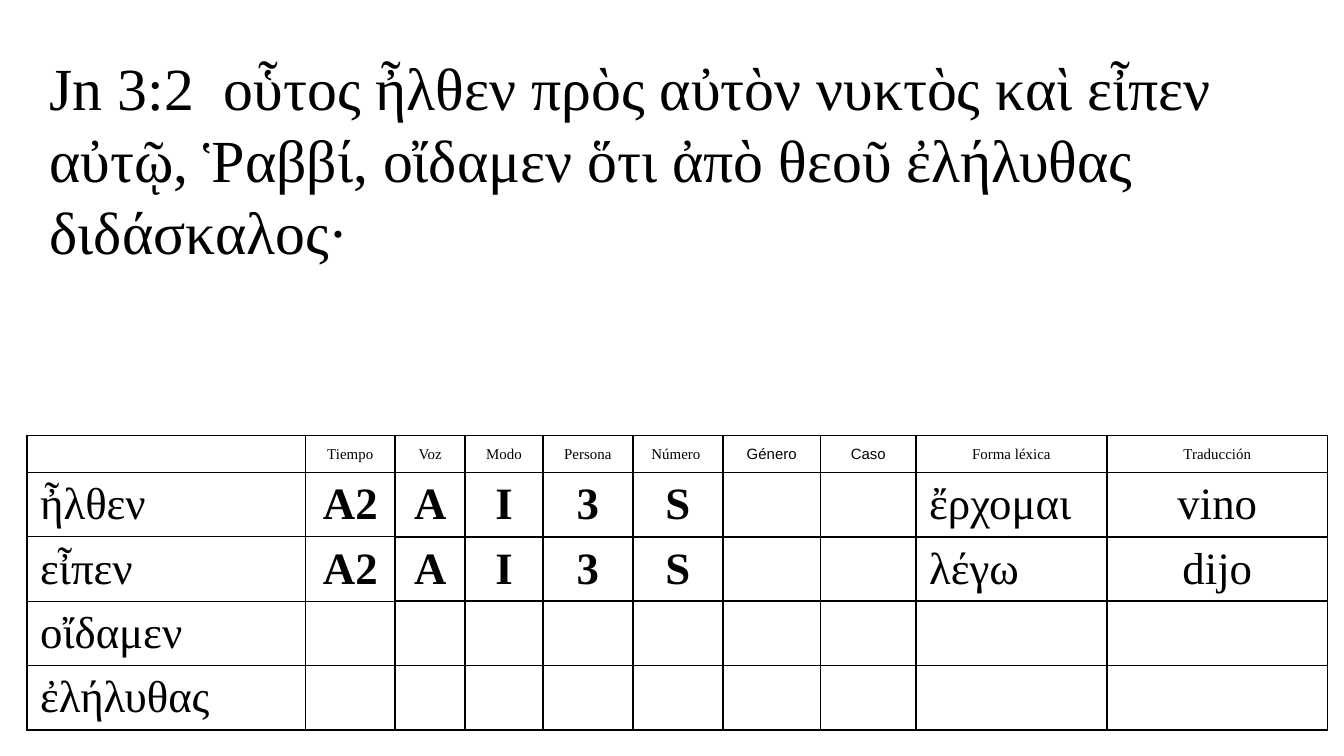
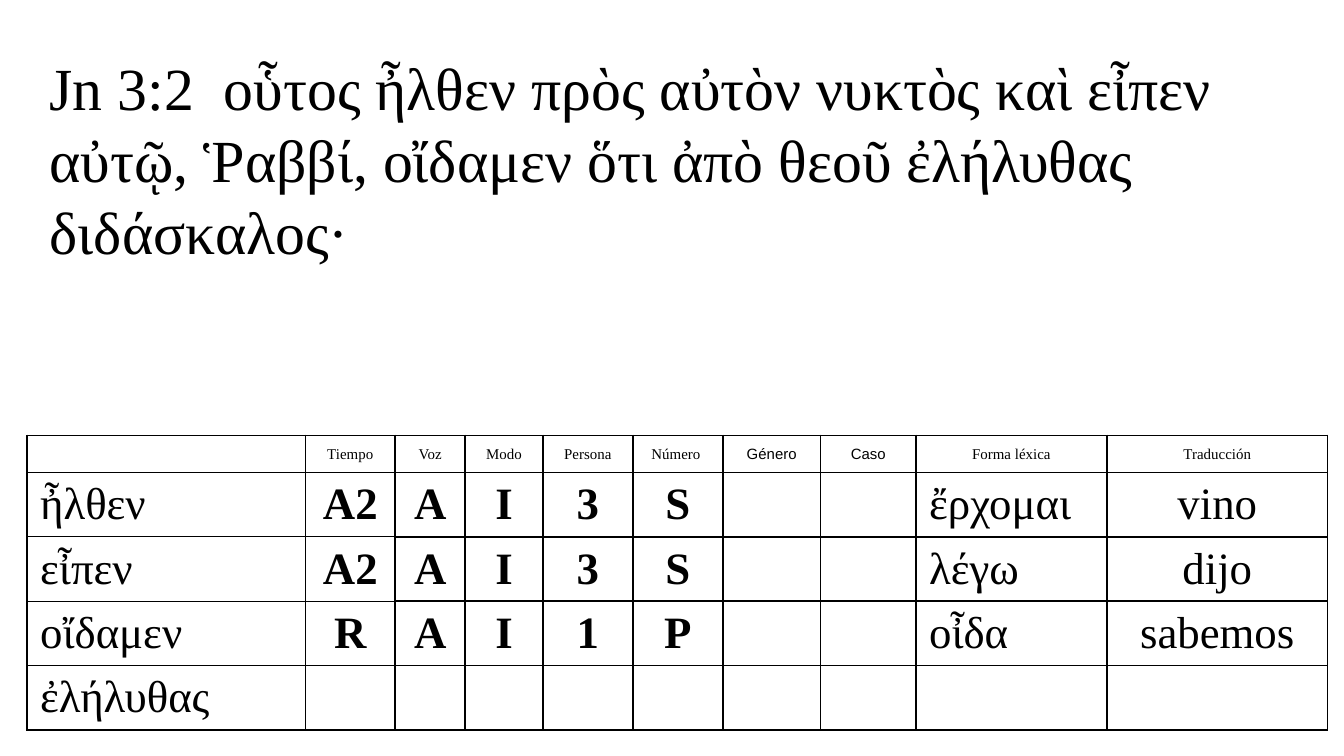
from lxml.etree import SubElement
from pptx import Presentation
from pptx.dml.color import RGBColor
from pptx.enum.text import MSO_ANCHOR, PP_ALIGN
from pptx.oxml.ns import qn
from pptx.util import Cm, Pt

BLACK = RGBColor(0x00, 0x00, 0x00)
SERIF, SANS = "Times New Roman", "Arial"

VERSE = ("Jn 3:2  οὗτος ἦλθεν πρὸς αὐτὸν νυκτὸς καὶ εἶπεν αὐτῷ, Ῥαββί, "
         "οἴδαμεν ὅτι ἀπὸ θεοῦ ἐλήλυθας διδάσκαλος·")
HEADERS = ["", "Tiempo", "Voz", "Modo", "Persona", "Número ", "Género", "Caso",
           "Forma léxica", "Traducción"]
VERBS = ["ἦλθεν", "εἶπεν", "οἴδαμεν", "ἐλήλυθας"]
PARSINGS = [
    ["A2", "A", "I", "3", "S", "", "", "ἔρχομαι", "vino"],
    ["A2", "A", "I", "3", "S", "", "", "λέγω", "dijo"],
    ["R", "A", "I", "1", "P", "", "", "οἶδα", "sabemos"],
]
ANSWERS_SHOWN = [2, 3]  # parsed verbs on each slide

COL_WIDTHS = [5.26, 1.7, 1.32, 1.47, 1.7, 1.7, 1.85, 1.8, 3.61, 4.17]
ROW_HEIGHTS = [0.7] + [1.21] * len(VERBS)
LEXICAL_COL = 8
LEFT_COLS = (0, LEXICAL_COL)
BOLD_COLS = range(1, LEXICAL_COL)
SANS_HEADERS = ("Género", "Caso")


def format_run(r, size, font=SERIF, bold=False):
    r.font.size = Pt(size)
    r.font.name = font
    r.font.bold = bold
    r.font.color.rgb = BLACK


def add_borders(cell, widths):
    """Draw black left, right, top and bottom borders, widths in points."""
    tcPr = cell._tc.get_or_add_tcPr()
    for side, width in zip("LRTB", widths):
        ln = SubElement(tcPr, qn(f"a:ln{side}"), w=str(Pt(width)))
        fill = SubElement(ln, qn("a:solidFill"))
        SubElement(fill, qn("a:srgbClr"), val=str(BLACK))


prs = Presentation()
prs.slide_width, prs.slide_height = Cm(25.4), Cm(14.29)

for shown in ANSWERS_SHOWN:
    s = prs.slides.add_slide(prs.slide_layouts[6])

    tf = s.shapes.add_textbox(Cm(0.69), Cm(0.84), Cm(24), Cm(4.37)).text_frame
    tf.word_wrap = True
    tf.text = VERSE
    format_run(tf.paragraphs[0].runs[0], 32)

    rows = [HEADERS]
    for i, verb in enumerate(VERBS):
        answers = PARSINGS[i] if i < shown else [""] * (len(HEADERS) - 1)
        rows.append([verb] + answers)

    table = s.shapes.add_table(len(rows), len(HEADERS), Cm(0.51), Cm(8.23),
                               Cm(sum(COL_WIDTHS)), Cm(sum(ROW_HEIGHTS))).table
    table.first_row = table.horz_banding = False
    for column, width in zip(table.columns, COL_WIDTHS):
        column.width = Cm(width)
    for row, height in zip(table.rows, ROW_HEIGHTS):
        row.height = Cm(height)

    for i, texts in enumerate(rows):
        for j, text in enumerate(texts):
            cell = table.cell(i, j)
            header = i == 0
            inner = 0.75 if j < 2 else 1
            add_borders(cell, (1, 1, 1 if header else inner, inner))
            cell.fill.background()
            cell.vertical_anchor = MSO_ANCHOR.MIDDLE
            cell.margin_left = cell.margin_right = Cm(0.25)
            cell.margin_top = cell.margin_bottom = Cm(0.1)
            p = cell.text_frame.paragraphs[0]
            left = j in LEFT_COLS and not header
            p.alignment = PP_ALIGN.LEFT if left else PP_ALIGN.CENTER
            if text:
                p.text = text
                format_run(p.runs[0], 8 if header else 24,
                           SANS if text in SANS_HEADERS else SERIF,
                           j in BOLD_COLS and not header)
            else:
                # Keeps an empty cell from stretching its row
                SubElement(p._p, qn("a:endParaRPr"), sz="800")

prs.save("out.pptx")
